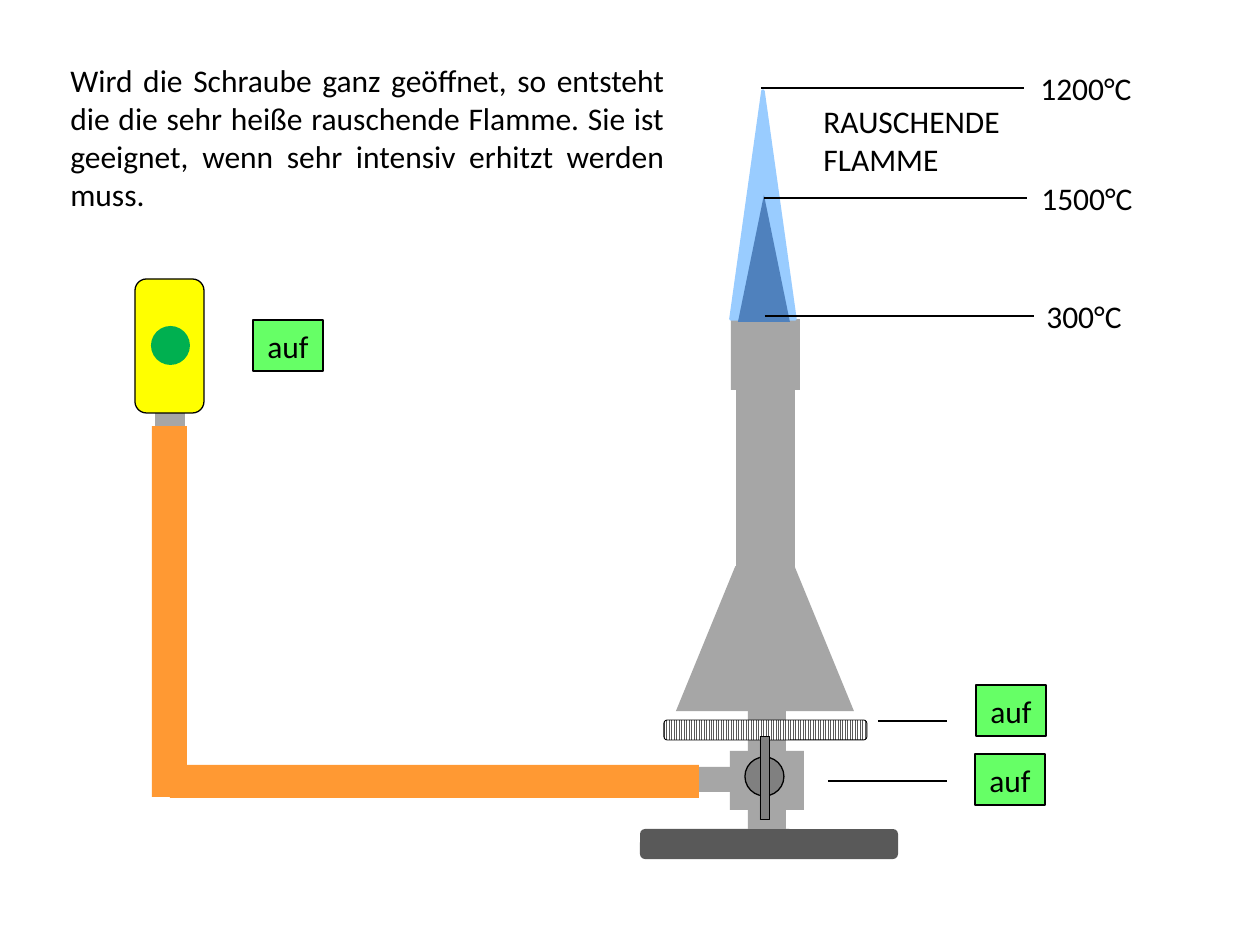
"""Draw a gas burner with its roaring flame, gas tap and labels."""
from pptx import Presentation
from pptx.dml.color import RGBColor as Rgb
from pptx.enum.dml import MSO_PATTERN as Pat
from pptx.enum.shapes import MSO_CONNECTOR as Conn, MSO_SHAPE as Geo
from pptx.enum.text import MSO_AUTO_SIZE as Fit, PP_ALIGN as Align
from pptx.oxml.ns import qn
from pptx.util import Emu, Pt
from lxml.etree import SubElement as sub

SCALE = 914400 / 126
HUES = {
    "black": "000000", "white": "FFFFFF", "steel": "A6A6A6", "iron": "595959",
    "knob": "808080", "hose": "FF9933", "tap": "FFFF00", "lamp": "00B050",
    "outer": "99CCFF", "inner": "4F81BD", "open": "66FF66",
}


def px(num):
    return Emu(round(num * SCALE))


def hue(name):
    return Rgb.from_string(HUES[name])


def part(slide, geo, box, fill, edge=0, ink="black", adj=None):
    item = slide.shapes.add_shape(geo, *map(px, box))
    item.shadow.inherit = False
    item.fill.solid()
    item.fill.fore_color.rgb = hue(fill)
    if edge:
        item.line.color.rgb = hue(ink)
        item.line.width = Pt(edge)
    else:
        item.line.fill.background()
    if adj is not None:
        item.adjustments[0] = adj
    return item


def write(item, rows, align=Align.LEFT):
    frame = item.text_frame
    frame.word_wrap = True
    frame.auto_size = Fit.SHAPE_TO_FIT_TEXT
    for i, row in enumerate(rows):
        para = frame.add_paragraph() if i else frame.paragraphs[0]
        para.alignment = align
        run = para.add_run()
        run.text = row
        run.font.name = "Calibri"
        run.font.size = Pt(18)
        run.font.color.rgb = hue("black")


def note(slide, box, rows, align=Align.LEFT):
    item = slide.shapes.add_textbox(*map(px, box))
    write(item, rows, align)
    return item


def rule(slide, left, right, y):
    line = slide.shapes.add_connector(Conn.STRAIGHT, px(left), px(y), px(right), px(y))
    line.line.color.rgb = hue("black")
    line.line.width = Pt(0.75)
    sub(line._element.spPr, qn("a:effectLst"))
    return line


def burner(slide):
    part(slide, Geo.TRAPEZOID, (676, 566, 178, 145), "steel", adj=0.41)
    part(slide, Geo.RECTANGLE, (736, 331, 59, 241), "steel")
    part(slide, Geo.ROUNDED_RECTANGLE, (640, 829, 258, 30), "iron")
    part(slide, Geo.RECTANGLE, (748, 690, 38, 139), "steel")
    ring = part(slide, Geo.ROUNDED_RECTANGLE, (664, 720, 203, 20), "white", 0.5)
    ring.fill.patterned()
    ring.fill.pattern = Pat.LIGHT_VERTICAL
    ring.fill.fore_color.rgb = hue("iron")
    ring.fill.back_color.rgb = hue("white")
    part(slide, Geo.RECTANGLE, (730, 751, 74, 59), "steel")
    part(slide, Geo.RECTANGLE, (684, 767, 69, 25), "steel")
    part(slide, Geo.OVAL, (745, 757, 39, 39), "knob", 0.75)
    part(slide, Geo.RECTANGLE, (760, 736, 10, 84), "knob", 0.5)
    part(slide, Geo.RECTANGLE, (731, 319, 69, 71), "steel")


def supply(slide):
    part(slide, Geo.RECTANGLE, (155, 362, 30, 82), "steel")
    part(slide, Geo.RECTANGLE, (170, 765, 529, 33), "hose")
    part(slide, Geo.RECTANGLE, (152, 426, 35, 371), "hose")
    part(slide, Geo.ROUNDED_RECTANGLE, (135, 279, 69, 134), "tap", 0.75)
    part(slide, Geo.OVAL, (151, 326, 39, 39), "lamp")


def flame(slide):
    part(slide, Geo.ISOSCELES_TRIANGLE, (731, 91, 64, 228), "outer", 2, "outer")
    part(slide, Geo.ISOSCELES_TRIANGLE, (738, 195, 52, 127), "inner")
    note(slide, (811, 96, 344, 89), ["RAUSCHENDE", "FLAMME"])


def labels(slide):
    note(slide, (58, 55, 619, 204), [
        "Wird die Schraube ganz geöffnet, so entsteht die die sehr heiße "
        "rauschende Flamme. Sie ist geeignet, wenn sehr intensiv erhitzt "
        "werden muss."], Align.JUSTIFY)
    for text, left, right, y, x in (
        ("1200°C", 761, 1024, 88, 1028),
        ("1500°C", 764, 1027, 198, 1029),
        ("300°C", 765, 1034, 316, 1034),
    ):
        line = rule(slide, left, right, y)
        tag = note(slide, (x, y - 25, 174, 50), [text])
        if right == x:
            line.end_connect(tag, 1)
    rule(slide, 878, 947, 721)
    rule(slide, 828, 947, 781)
    for x, y in ((253, 320), (975, 754), (976, 685)):
        tag = part(slide, Geo.RECTANGLE, (x, y, 70, 51), "open", 0.75)
        write(tag, ["auf"], Align.CENTER)


def main():
    deck = Presentation()
    deck.slide_width, deck.slide_height = px(1260), px(945)
    slide = deck.slides.add_slide(deck.slide_layouts[6])
    for draw in (burner, supply, flame, labels):
        draw(slide)
    deck.save("out.pptx")


if __name__ == "__main__":
    main()
